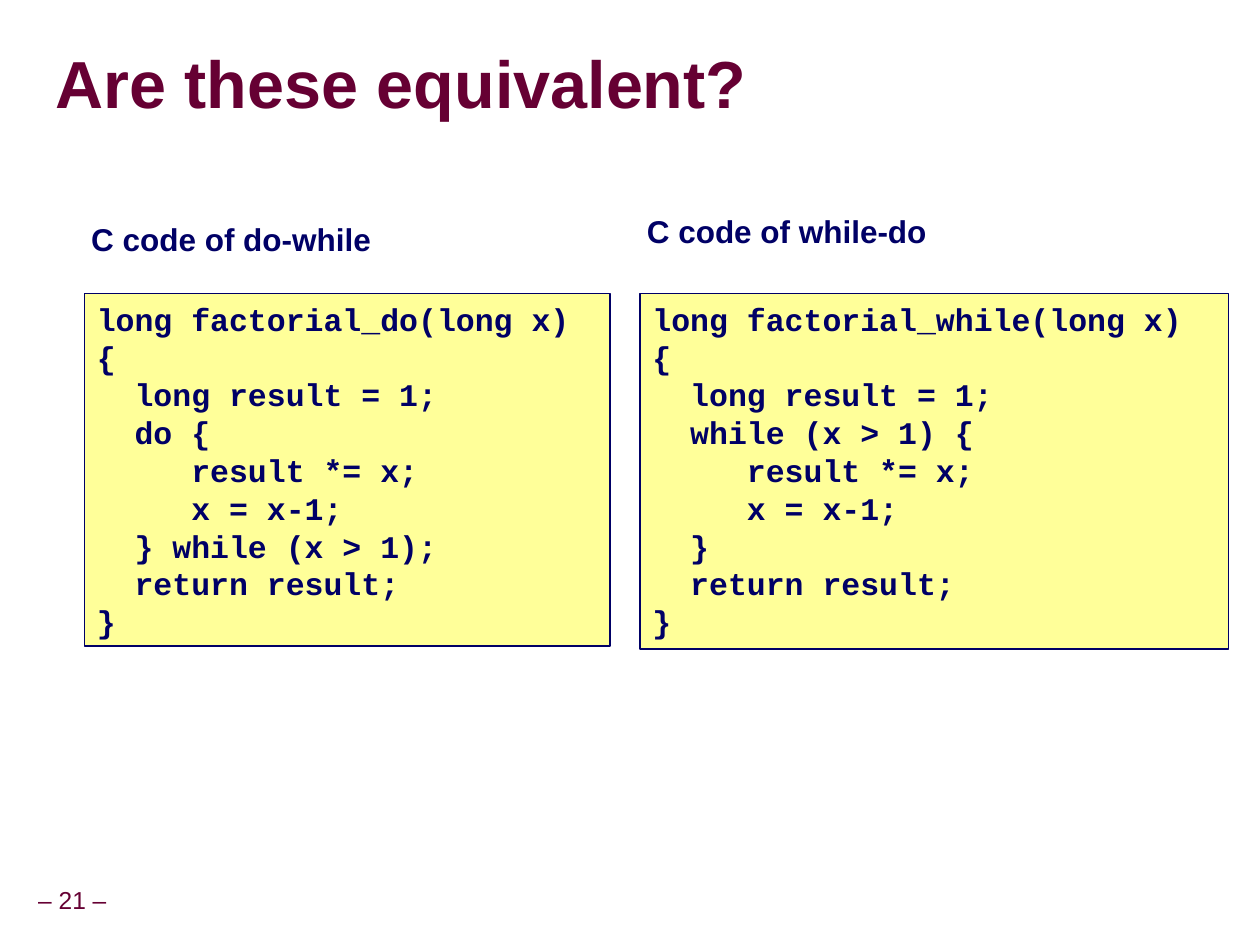
from pptx import Presentation
from pptx.dml.color import RGBColor
from pptx.enum.shapes import MSO_SHAPE as Shape
from pptx.enum.text import MSO_ANCHOR as Anchor, PP_ALIGN as Align
from pptx.util import Inches, Pt

MAROON, NAVY, YELLOW = "660033", "000066", "FFFF99"
TITLE = "Are these equivalent?"
PAGE = "– 21 –"
LISTINGS = [
    {
        "heading": "C code of do-while",
        "heading_top": 1.73,
        "box": (0.67, 2.33, 4.17, 2.8),
        "code": [
            "long factorial_do(long x)",
            "{",
            "  long result = 1;",
            "  do {",
            "     result *= x;",
            "     x = x-1;",
            "  } while (x > 1);",
            "  return result;",
            "}",
        ],
    },
    {
        "heading": "C code of while-do",
        "heading_top": 1.67,
        "box": (5.08, 2.33, 4.67, 2.82),
        "code": [
            "long factorial_while(long x)",
            "{",
            "  long result = 1;",
            "  while (x > 1) {",
            "     result *= x;",
            "     x = x-1;",
            "  }",
            "  return result;",
            "}",
        ],
    },
]


def color(value):
    return RGBColor.from_string(value)


def write(frame, lines, size, ink, font="Arial", bold=True, align=Align.LEFT,
          spacing=0.9, anchor=Anchor.TOP, insets=(0.05, 0.05), wrap=False):
    frame.word_wrap = wrap
    frame.vertical_anchor = anchor
    frame.margin_left = frame.margin_right = Inches(insets[0])
    frame.margin_top = frame.margin_bottom = Inches(insets[1])
    for index, line in enumerate(lines):
        paragraph = frame.add_paragraph() if index else frame.paragraphs[0]
        paragraph.alignment = align
        paragraph.line_spacing = spacing
        run = paragraph.add_run()
        run.text = line
        run.font.name, run.font.size, run.font.bold = font, Pt(size), bold
        run.font.color.rgb = color(ink)


def add_label(slide, box, text, size, ink, **style):
    label = slide.shapes.add_textbox(*map(Inches, box))
    write(label.text_frame, [text], size, ink, align=Align.CENTER, **style)


def add_listing(slide, listing):
    left = listing["box"][0]
    panel = slide.shapes.add_shape(Shape.RECTANGLE, *map(Inches, listing["box"]))
    panel.shadow.inherit = False
    panel.fill.solid()
    panel.fill.fore_color.rgb = color(YELLOW)
    panel.line.color.rgb = color(NAVY)
    panel.line.width = Pt(1)
    write(panel.text_frame, listing["code"], 18, NAVY, font="Courier New",
          spacing=Pt(21.6), insets=(0.1, 0.05), wrap=True)
    add_label(slide, (left, listing["heading_top"], 2.33, 0.37),
              listing["heading"], 18, NAVY)


def main():
    """Build the slide comparing two factorial loops."""
    deck = Presentation()
    deck.slide_width, deck.slide_height = Inches(10), Inches(7.5)
    slide = deck.slides.add_slide(deck.slide_layouts[5])
    title = slide.shapes.title
    title.left, title.top, title.width, title.height = map(
        Inches, (0.44, 0.27, 9.53, 0.85))
    write(title.text_frame, [TITLE], 38, MAROON, spacing=0.87,
          anchor=Anchor.MIDDLE, insets=(0, 0), wrap=True)
    for listing in LISTINGS:
        add_listing(slide, listing)
    add_label(slide, (-0.09, 7, 1.33, 0.31), PAGE, 14, MAROON,
              bold=False, anchor=Anchor.MIDDLE)
    deck.save("out.pptx")


if __name__ == "__main__":
    main()
